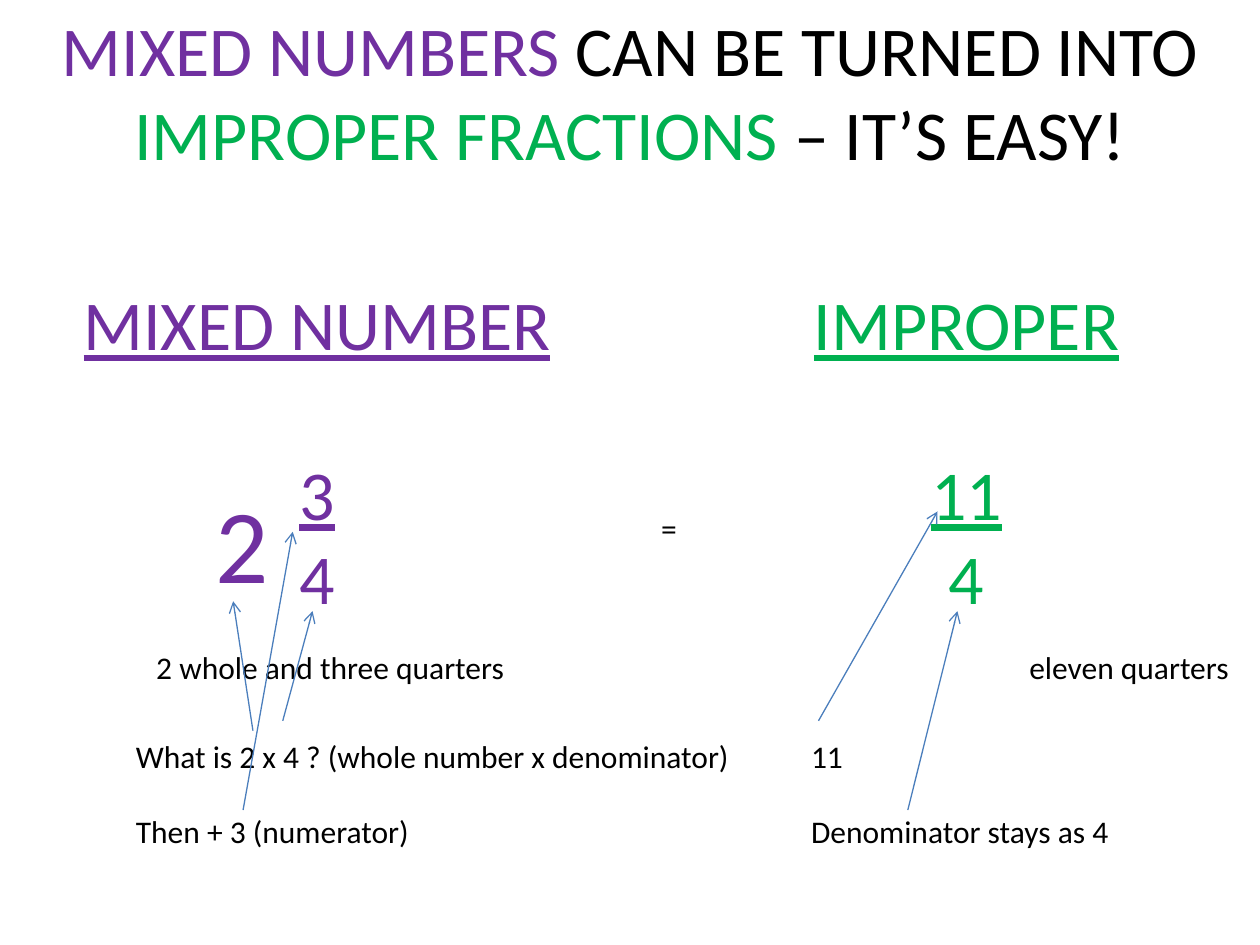
from lxml.etree import SubElement
from pptx import Presentation
from pptx.dml.color import RGBColor
from pptx.enum.shapes import MSO_CONNECTOR
from pptx.enum.text import MSO_ANCHOR, MSO_AUTO_SIZE, PP_ALIGN
from pptx.oxml.ns import qn
from pptx.util import Cm, Pt

PURPLE = RGBColor(0x70, 0x30, 0xA0)
GREEN = RGBColor(0x00, 0xB0, 0x50)
BLACK = RGBColor(0x00, 0x00, 0x00)
ARROW_BLUE = RGBColor(0x4B, 0x7E, 0xBC)


class FractionPage:
    """Holds the style and the current slide; lengths are in centimetres."""

    font = "Calibri"
    large, body = 40, 18

    def __init__(self, deck):
        self.page = deck.slides.add_slide(deck.slide_layouts[5])

    def style(self, para, size, color=None, align=PP_ALIGN.LEFT):
        para.alignment = align
        para.font.name = self.font
        para.font.size = Pt(size)
        if color is not None:
            para.font.color.rgb = color

    def title(self, left, top, width, height, spans):
        box = self.page.shapes.title
        box.left, box.top, box.width, box.height = map(Cm, (left, top, width, height))
        frame = box.text_frame
        frame.auto_size = MSO_AUTO_SIZE.NONE
        frame.vertical_anchor = MSO_ANCHOR.TOP
        para = frame.paragraphs[0]
        self.style(para, self.large, align=PP_ALIGN.CENTER)
        for text, color in spans:
            span = para.add_run()
            span.text = text
            span.font.color.rgb = color

    def text(self, left, top, width, height, lines, size=body, color=BLACK,
             align=PP_ALIGN.LEFT, gap=0):
        """Add a text box with a gap in points after its first line."""
        box = self.page.shapes.add_textbox(*map(Cm, (left, top, width, height)))
        frame = box.text_frame
        frame.word_wrap = True
        for index, line in enumerate(lines):
            para = frame.paragraphs[0] if index == 0 else frame.add_paragraph()
            para.text = line
            self.style(para, size, color, align)
            if index == 1:
                para.space_before = Pt(gap)
        return frame

    def fraction(self, left, width, heading, numerator, denominator, color):
        """Add an underlined heading above an underlined numerator."""
        frame = self.text(left, 5.54, width, 7.09, [heading, numerator, denominator],
                          self.large, color, PP_ALIGN.CENTER, gap=48.8)
        for para in frame.paragraphs[:2]:
            para.font.underline = True
            para.runs[0].font.underline = True

    def arrow(self, start, end):
        line = self.page.shapes.add_connector(
            MSO_CONNECTOR.STRAIGHT, *map(Cm, (*start, *end)))
        line.line.color.rgb = ARROW_BLUE
        line.line.width = Pt(0.75)
        SubElement(line.line._get_or_add_ln(), qn("a:tailEnd"), type="arrow")
        SubElement(line._element.spPr, qn("a:effectLst"))


def main():
    deck = Presentation()
    deck.slide_width, deck.slide_height = Cm(25.4), Cm(19.05)
    page = FractionPage(deck)

    # Title
    page.title(0, 0, 25.4, 3.68, [
        ("MIXED NUMBERS ", PURPLE),
        ("CAN BE TURNED INTO ", BLACK),
        ("IMPROPER FRACTIONS ", GREEN),
        ("– IT’S EASY!", BLACK),
    ])

    # The two forms of the number
    page.fraction(15.09, 8.79, "IMPROPER", "11", "4", GREEN)
    page.fraction(0.89, 11, "MIXED NUMBER", "3", "4", PURPLE)
    page.text(12.29, 10.13, 2.39, 1.02, ["="], align=PP_ALIGN.CENTER)
    page.text(4.09, 9.53, 2.21, 2.82, ["2"], size=60, color=PURPLE)

    # The numbers in words
    page.text(2.9, 12.93, 7.6, 1.02, ["2 whole and three quarters"])
    page.text(20.5, 12.93, 4.9, 1.02, ["eleven quarters"])

    # Steps of the conversion
    page.text(2.49, 14.73, 12.8, 2.57, [
        "What is 2 x 4 ? (whole number x denominator)",
        "Then + 3 (numerator)",
    ], gap=21.5)
    page.text(16.1, 14.73, 9.3, 2.57, ["11", "Denominator stays as 4"], gap=21.5)

    # Arrows from each step to its part of the number
    for start, end in [
        ((5.1, 14.73), (4.7, 12.12)),
        ((5.7, 14.53), (6.3, 12.32)),
        ((4.9, 16.33), (5.9, 10.72)),
        ((16.5, 14.53), (18.9, 10.31)),
        ((18.3, 16.33), (19.3, 12.32)),
    ]:
        page.arrow(start, end)

    deck.save("out.pptx")


if __name__ == "__main__":
    main()
